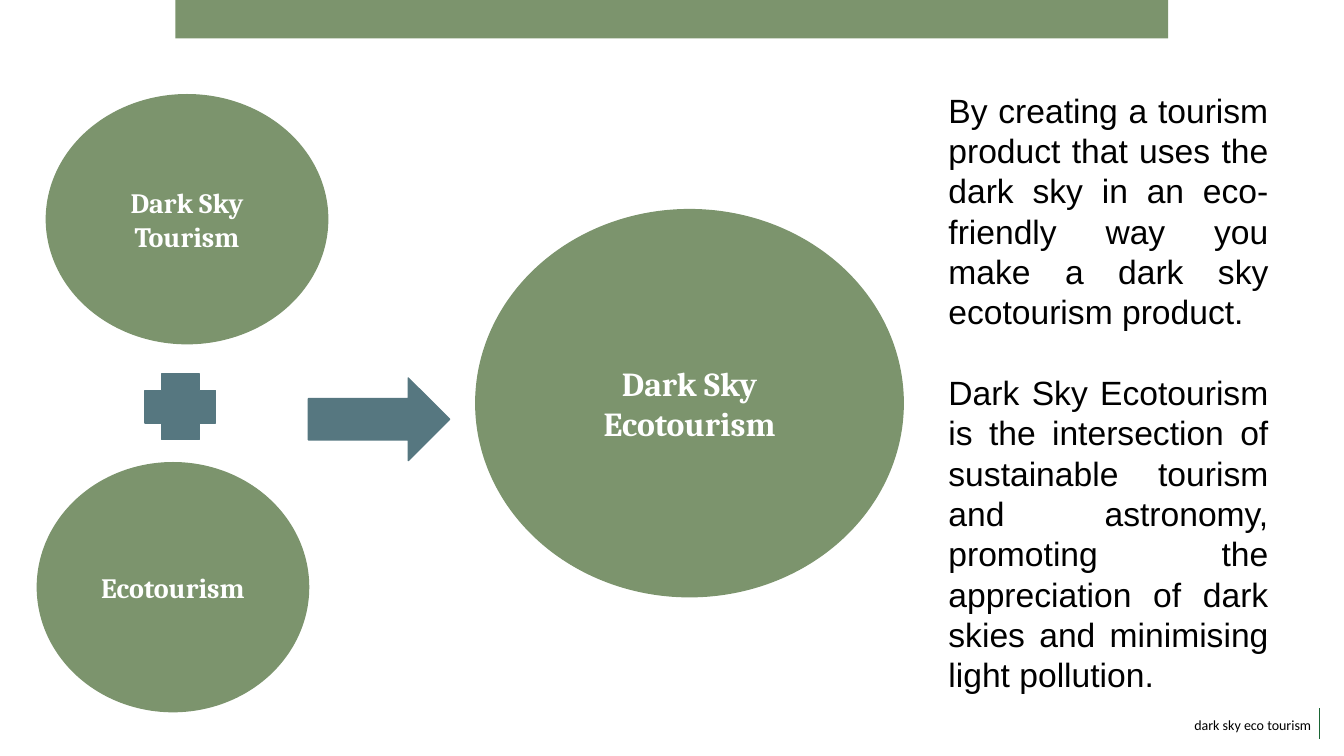
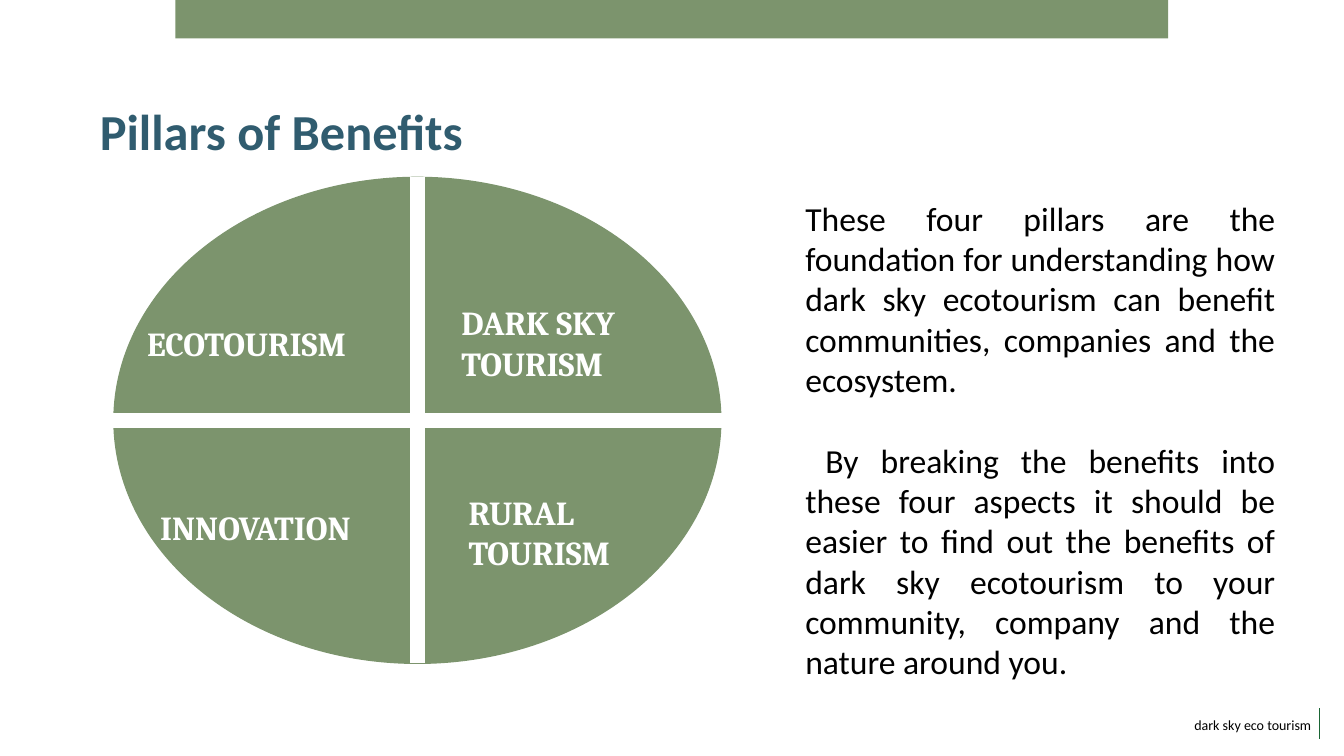
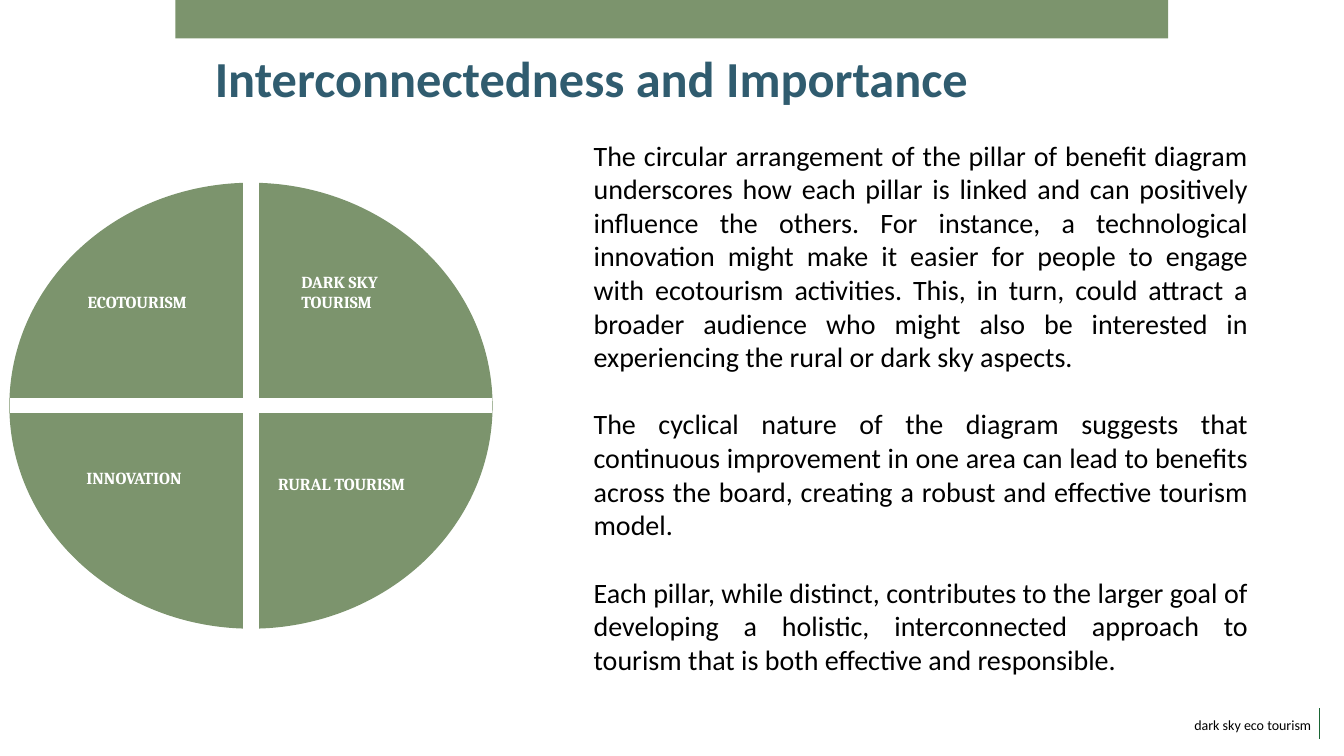
"""Builds three slides on dark sky ecotourism and its four pillars."""
from lxml.etree import SubElement
from pptx import Presentation
from pptx.dml.color import RGBColor
from pptx.enum.shapes import MSO_CONNECTOR, MSO_SHAPE
from pptx.enum.text import MSO_ANCHOR, MSO_AUTO_SIZE, PP_ALIGN
from pptx.oxml.ns import qn
from pptx.util import Inches, Pt

WIDTH, HEIGHT = Inches(13.33), Inches(7.5)
LINE_HEIGHT = 1.2
TITLE_ONLY, BLANK = 5, 6
COLORS = {
    "sage": "7C946D",
    "slate": "567780",
    "title": "305C6F",
    "forest": "1A6534",
    "white": "FFFFFF",
    "black": "000000",
}
PILLARS = ("ECOTOURISM", "DARK SKY TOURISM", "INNOVATION", "RURAL TOURISM")


def rgb(color):
    return RGBColor.from_string(COLORS[color])


def across(share):
    return round(WIDTH * share / 100)


def down(share):
    return round(HEIGHT * share / 100)


def place(left, top, width, height):
    return across(left), down(top), across(width), down(height)


def write(frame, paragraphs, size, font="Calibri", color="black", bold=False,
          align=PP_ALIGN.LEFT, anchor=MSO_ANCHOR.TOP):
    frame.word_wrap = True
    frame.auto_size = MSO_AUTO_SIZE.NONE
    frame.vertical_anchor = anchor
    for index, text in enumerate(paragraphs):
        paragraph = frame.add_paragraph() if index else frame.paragraphs[0]
        paragraph.alignment = align
        paragraph.line_spacing = Pt(size * LINE_HEIGHT)
        paragraph.space_before = Pt(size * LINE_HEIGHT if index else 0)
        run = paragraph.add_run()
        run.text = text
        run.font.size = Pt(size)
        run.font.name = font
        run.font.bold = bold
        run.font.color.rgb = rgb(color)


def add_text(slide, box, paragraphs, size, **style):
    frame = slide.shapes.add_textbox(*place(*box)).text_frame
    write(frame, paragraphs, size, **style)
    return frame


def add_figure(slide, kind, box, color, outline=1):
    figure = slide.shapes.add_shape(kind, *place(*box))
    figure.shadow.inherit = False
    figure.fill.solid()
    figure.fill.fore_color.rgb = rgb(color)
    if outline:
        figure.line.color.rgb = rgb(color)
        figure.line.width = Pt(outline)
    else:
        figure.line.fill.background()
    return figure


def add_rule(slide, start, end, color, weight):
    rule = slide.shapes.add_connector(
        MSO_CONNECTOR.STRAIGHT, across(start[0]), down(start[1]), across(end[0]), down(end[1]))
    rule.line.color.rgb = rgb(color)
    rule.line.width = Pt(weight)
    SubElement(rule._element.spPr, qn("a:effectLst"))


def add_topic(slide, box, text, size):
    topic = add_figure(slide, MSO_SHAPE.OVAL, box, "sage")
    write(topic.text_frame, [text], size, font="Cambria", color="white", bold=True,
          align=PP_ALIGN.CENTER, anchor=MSO_ANCHOR.MIDDLE)


def add_pillar_wheel(slide, box, horizontal, vertical, label_boxes, size):
    left, top, width, height = box
    center, middle = left + width / 2, top + height / 2
    add_figure(slide, MSO_SHAPE.OVAL, box, "sage")
    add_rule(slide, (center, vertical[0]), (center, vertical[1]), "white", 10.75)
    add_rule(slide, (horizontal[0], middle), (horizontal[1], middle), "white", 10.75)
    for pillar, label_box in zip(PILLARS, label_boxes):
        add_text(slide, label_box, [pillar], size, font="Cambria", color="white", bold=True)


def start_slide(deck, title=None, title_box=None):
    slide = deck.slides.add_slide(deck.slide_layouts[TITLE_ONLY if title else BLANK])
    add_text(slide, (88.13, 94.13, 11.48, 3.6), ["dark sky eco tourism"], 10)
    add_rule(slide, (98.18, 97.73), (98.18, 93.6), "forest", 0.75)
    add_figure(slide, MSO_SHAPE.RECTANGLE, (13.05, 0, 73.88, 5.07), "sage", outline=0)
    if title:
        heading = slide.shapes.title
        heading.left, heading.top, heading.width, heading.height = place(*title_box)
        write(heading.text_frame, [title], 36, color="title", bold=True)
    return slide


def build_definition(deck):
    slide = start_slide(deck)
    add_topic(slide, (3.45, 12.53, 20.93, 32.93), "Dark Sky Tourism", 20)
    add_topic(slide, (2.78, 61.2, 20.18, 32.93), "Ecotourism", 20)
    add_topic(slide, (35.4, 27.73, 31.8, 51.2), "Dark Sky Ecotourism", 24)
    add_figure(slide, MSO_SHAPE.CROSS, (10.8, 49.47, 5.25, 8.67), "slate")
    add_figure(slide, MSO_SHAPE.RIGHT_ARROW, (22.95, 50, 10.5, 10.93), "slate")
    add_text(slide, (69.83, 10.8, 25.28, 82.13), [
        "By creating a tourism product that uses the dark sky in an eco-friendly way "
        "you make a dark sky ecotourism product.",
        "Dark Sky Ecotourism is the intersection of sustainable tourism and astronomy, "
        "promoting the appreciation of dark skies and minimising light pollution.",
    ], 24, font="Arial", align=PP_ALIGN.JUSTIFY, anchor=MSO_ANCHOR.MIDDLE)


def build_pillars(deck):
    slide = start_slide(deck, "Pillars of Benefits", (6.68, 12.53, 85.95, 11.73))
    add_pillar_wheel(slide, (8.48, 23.47, 45.15, 64.27), (59.18, 6.68), (23.47, 87.73), [
        (10.2, 42, 20.93, 6.67),
        (33.6, 39.33, 20.93, 12.13),
        (11.18, 66.4, 20.78, 6.67),
        (34.13, 64.4, 15.98, 12.13),
    ], 24)
    explanation = add_text(slide, (59.18, 25.47, 36.45, 66.67), [
        "These four pillars are the foundation for understanding how dark sky ecotourism "
        "can benefit communities, companies and the ecosystem.",
        "By breaking the benefits into these four aspects it should be easier to find out "
        "the benefits of dark sky ecotourism to your community, company and the nature "
        "around you.",
    ], 24, align=PP_ALIGN.JUSTIFY)
    explanation.paragraphs[1]._p.get_or_add_pPr().set("indent", str(Inches(0.2)))


def build_interconnectedness(deck):
    slide = start_slide(deck, "Interconnectedness and Importance", (15.23, 5.6, 71.7, 12.13))
    add_text(slide, (43.43, 17.6, 50.18, 74.4), [
        "The circular arrangement of the pillar of benefit diagram underscores how each "
        "pillar is linked and can positively influence the others. For instance, a "
        "technological innovation might make it easier for people to engage with ecotourism "
        "activities. This, in turn, could attract a broader audience who might also be "
        "interested in experiencing the rural or dark sky aspects.",
        "The cyclical nature of the diagram suggests that continuous improvement in one "
        "area can lead to benefits across the board, creating a robust and effective "
        "tourism model.",
        "Each pillar, while distinct, contributes to the larger goal of developing a "
        "holistic, interconnected approach to tourism that is both effective and "
        "responsible.",
    ], 20, align=PP_ALIGN.JUSTIFY)
    add_pillar_wheel(slide, (0.75, 24.27, 35.85, 58.8), (36.6, 0.75), (22.67, 86.93), [
        (5.78, 38, 20.93, 4),
        (21.68, 35.33, 9.53, 6.67),
        (5.7, 61.2, 20.78, 4),
        (19.95, 62, 15.98, 4),
    ], 12)


def main():
    deck = Presentation()
    deck.slide_width, deck.slide_height = WIDTH, HEIGHT
    build_definition(deck)
    build_pillars(deck)
    build_interconnectedness(deck)
    deck.save("out.pptx")


if __name__ == "__main__":
    main()
